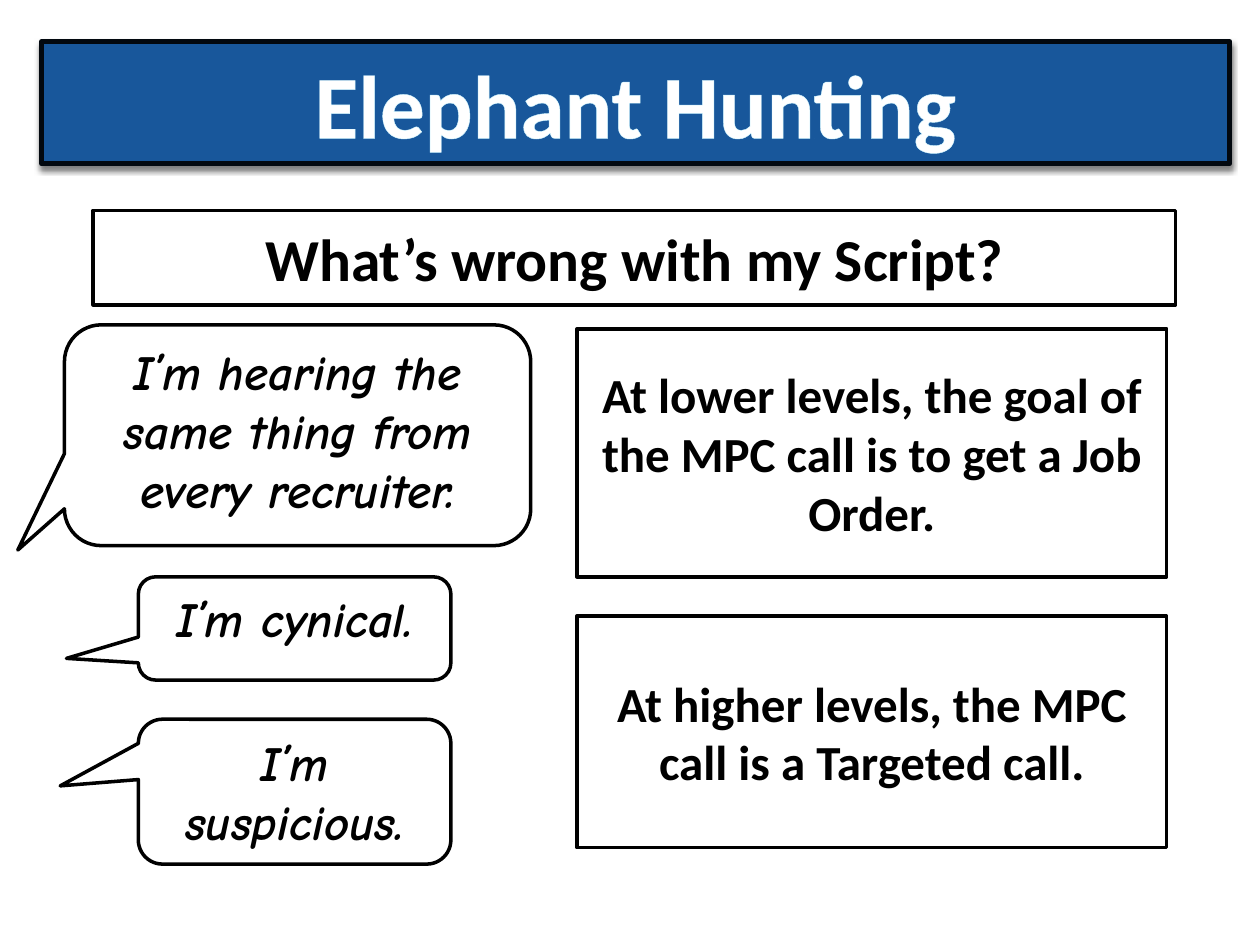
from dataclasses import dataclass

from lxml import etree
from pptx import Presentation
from pptx.dml.color import RGBColor as Rgb
from pptx.enum.shapes import MSO_SHAPE as Kind
from pptx.enum.text import MSO_ANCHOR as Anchor, MSO_AUTO_SIZE as Fit, PP_ALIGN as Align
from pptx.util import Cm, Pt

NS = "http://schemas.openxmlformats.org/drawingml/2006/main"


@dataclass(frozen=True)
class Theme:
    white: str = "FFFFFF"
    black: str = "000000"
    blue: str = "18579B"
    edge: str = "02080F"
    glow: str = "CCF2FD"
    sans: str = "Calibri"
    comic: str = "Comic Neue"
    title: int = 51
    head: int = 34
    body: int = 28


T = Theme()


def paint(shape, fill, line, width):
    shape.fill.solid()
    shape.fill.fore_color.rgb = Rgb.from_string(fill)
    shape.line.color.rgb = Rgb.from_string(line)
    shape.line.width = Pt(width)


def write(shape, text, size, face=T.sans, color=T.black, anchor=Anchor.MIDDLE, italic=False):
    frame = shape.text_frame
    frame.word_wrap = True
    frame.auto_size = Fit.NONE
    frame.vertical_anchor = anchor
    frame.text = text
    para = frame.paragraphs[0]
    para.alignment = Align.CENTER
    font = para.font
    font.name, font.size = face, Pt(size)
    font.bold, font.italic = True, italic
    font.color.rgb = Rgb.from_string(color)


def add_title(slide, text, box):
    title = slide.shapes.title
    title.left, title.top, title.width, title.height = map(Cm, box)
    paint(title, T.blue, T.edge, 3)
    write(title, text, T.title, color=T.white)
    # Soft shadow below the banner
    title._element.spPr.append(etree.fromstring(
        f'<a:effectLst xmlns:a="{NS}"><a:outerShdw blurRad="{Pt(3)}" dist="{Pt(2)}" '
        f'dir="5400000" rotWithShape="0"><a:srgbClr val="{T.black}">'
        '<a:alpha val="50000"/></a:srgbClr></a:outerShdw></a:effectLst>'))
    # Thin pale outline on the letters
    run = title.text_frame.paragraphs[0].runs[0]
    run._r.get_or_add_rPr().insert(0, etree.fromstring(
        f'<a:ln xmlns:a="{NS}" w="{Pt(1)}"><a:solidFill>'
        f'<a:srgbClr val="{T.glow}"/></a:solidFill></a:ln>'))


def add_shape(slide, kind, box):
    shape = slide.shapes.add_shape(kind, *map(Cm, box))
    shape.shadow.inherit = False
    paint(shape, T.white, T.black, 2)
    return shape


def add_box(slide, text, box, size=T.body):
    write(add_shape(slide, Kind.RECTANGLE, box), text, size)


def add_quote(slide, text, box, tip):
    quote = add_shape(slide, Kind.ROUNDED_RECTANGULAR_CALLOUT, box)
    quote.adjustments[0], quote.adjustments[1] = tip
    write(quote, text, T.body, T.comic, anchor=Anchor.TOP, italic=True)


def main():
    deck = Presentation()
    deck.slide_width, deck.slide_height = Cm(25.4), Cm(19.05)
    slide = deck.slides.add_slide(deck.slide_layouts[5])

    # Banner and question
    add_title(slide, "Elephant Hunting", (0.84, 0.84, 23.95, 2.46))
    add_box(slide, "What’s wrong with my Script?", (1.88, 4.24, 21.82, 1.91), T.head)

    # What the listener thinks
    add_quote(slide, "I’m hearing the same thing from every recruiter.",
              (1.3, 6.55, 9.4, 4.45), (-0.6, 0.52))
    add_quote(slide, "I’m cynical.", (2.79, 11.63, 6.3, 2.08), (-0.73, 0.29))
    add_quote(slide, "I’m suspicious.", (2.79, 14.5, 6.3, 2.92), (-0.75, -0.04))

    # Goal at each level
    left, width = 11.63, 11.89
    add_box(slide, "At lower levels, the goal of the MPC call is to get a Job Order.",
            (left, 6.63, width, 5))
    add_box(slide, "At higher levels, the MPC call is a Targeted call.",
            (left, 12.42, width, 4.67))

    deck.save("out.pptx")


if __name__ == "__main__":
    main()
